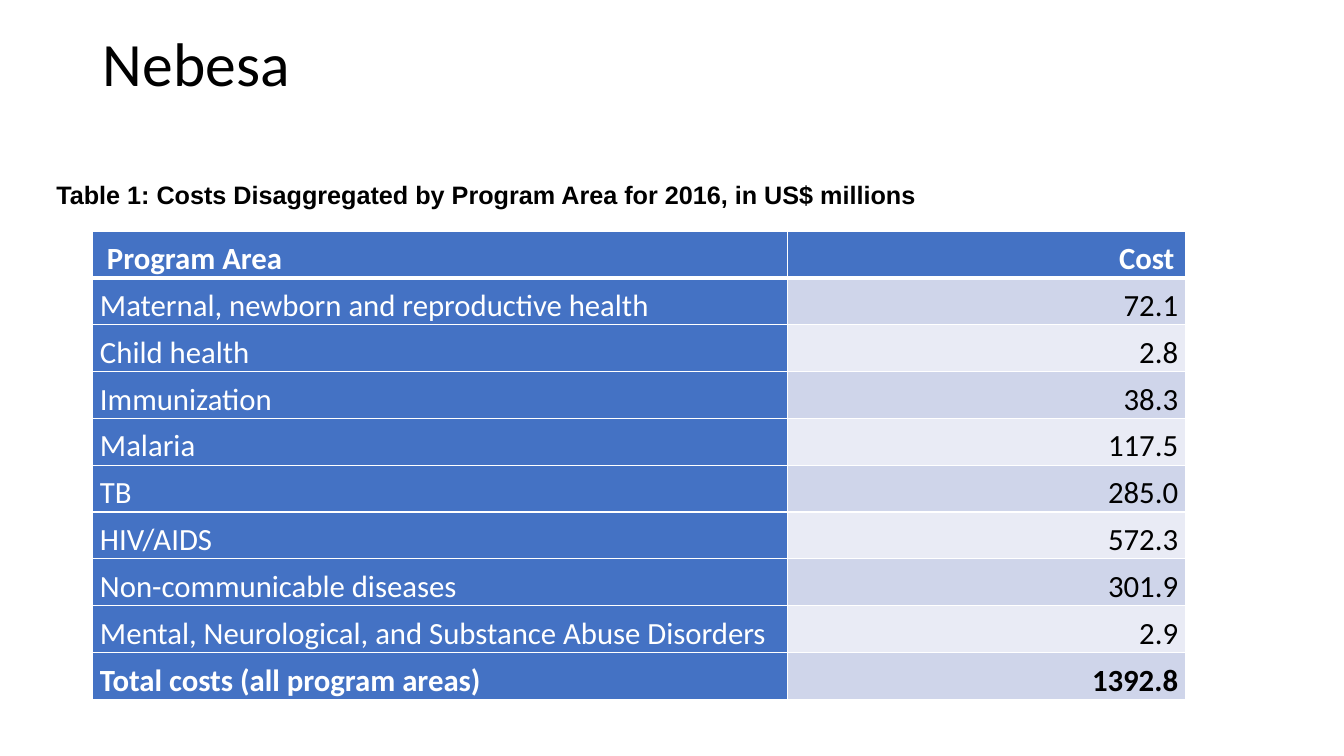
import pptx
import pptx.dml.color
import pptx.enum.text
import pptx.oxml
import pptx.oxml.ns
import pptx.util
from pptx.util import Cm

ANCHOR = pptx.enum.text.MSO_ANCHOR
ALIGN = pptx.enum.text.PP_ALIGN
BLUE, WHITE, BLACK = "4472C4", "FFFFFF", "000000"
BANDS = ["CFD5EA", "E9EBF5"]


def color(hex_value):
    return pptx.dml.color.RGBColor.from_string(hex_value)


def add_span(para, text, size, hex_value, bold=False, name="Calibri"):
    span = para.add_run()
    span.text = text
    formats = {"size": pptx.util.Pt(size), "bold": bold, "name": name}
    for key, value in formats.items():
        setattr(span.font, key, value)
    span.font.color.rgb = color(hex_value)


deck = pptx.Presentation()
deck.slide_width, deck.slide_height = Cm(33.87), Cm(19.05)
page = deck.slides.add_slide(deck.slide_layouts[6])

# Title and table caption
headings = [
    ("Nebesa", (2.34, -0.15, 29.21, 3.68), 44, False, "Calibri", 0.9),
    ("Table 1: Costs Disaggregated by Program Area for 2016, in US$ millions",
     (1.17, 4.27, 33.87, 1.27), 18, True, "Arial", 1.0),
]
for text, place, size, bold, name, spacing in headings:
    box = page.shapes.add_textbox(*map(Cm, place))
    frame_formats = {"word_wrap": True, "vertical_anchor": ANCHOR.MIDDLE}
    for key, value in frame_formats.items():
        setattr(box.text_frame, key, value)
    para = box.text_frame.paragraphs[0]
    para.line_spacing = spacing
    add_span(para, text, size, BLACK, bold, name)

# Cost table
costs = [
    (" Program Area", "Cost"),
    ("Maternal, newborn and reproductive health", "72.1"),
    ("Child health", "2.8"),
    ("Immunization", "38.3"),
    ("Malaria", "117.5"),
    ("TB", "285.0"),
    ("HIV/AIDS", "572.3"),
    ("Non-communicable diseases", "301.9"),
    ("Mental, Neurological, and Substance Abuse Disorders", "2.9"),
    ("Total costs (all program areas)", "1392.8"),
]
widths = [17.5, 10.03]
row_height = 1.18
table = page.shapes.add_table(
    len(costs), len(widths), Cm(2.34), Cm(5.82),
    Cm(sum(widths)), Cm(row_height * len(costs))).table
for column, width in zip(table.columns, widths):
    column.width = Cm(width)

cell_formats = {
    "margin_left": Cm(0.18), "margin_right": Cm(0.18),
    "margin_top": 0, "margin_bottom": 0,
    "vertical_anchor": ANCHOR.BOTTOM,
}
for r, values in enumerate(costs):
    table.rows[r].height = Cm(row_height)
    for c, text in enumerate(values):
        cell = table.cell(r, c)
        for key, value in cell_formats.items():
            setattr(cell, key, value)

        # White borders, thick under the header
        widths_by_side = {"lnL": 1, "lnR": 1, "lnT": 3 if r == 1 else 1,
                          "lnB": 3 if r == 0 else 1}
        for side, points in widths_by_side.items():
            cell._tc.get_or_add_tcPr().append(pptx.oxml.parse_xml(
                f'<a:{side} {pptx.oxml.ns.nsdecls("a")} w="{points * 12700}">'
                f'<a:solidFill><a:srgbClr val="{WHITE}"/></a:solidFill>'
                f'</a:{side}>'))

        # Blue header and first column, banded values
        is_blue = r == 0 or c == 0
        cell.fill.solid()
        cell.fill.fore_color.rgb = color(BLUE if is_blue else BANDS[(r - 1) % 2])
        para = cell.text_frame.paragraphs[0]
        para.alignment = ALIGN.RIGHT if c else ALIGN.LEFT
        add_span(para, text, 22, WHITE if is_blue else BLACK,
                 r in (0, len(costs) - 1))

# Small trailing space after the cost heading
add_span(table.cell(0, 1).text_frame.paragraphs[0], " ", 12, WHITE, True)

deck.save("out.pptx")
